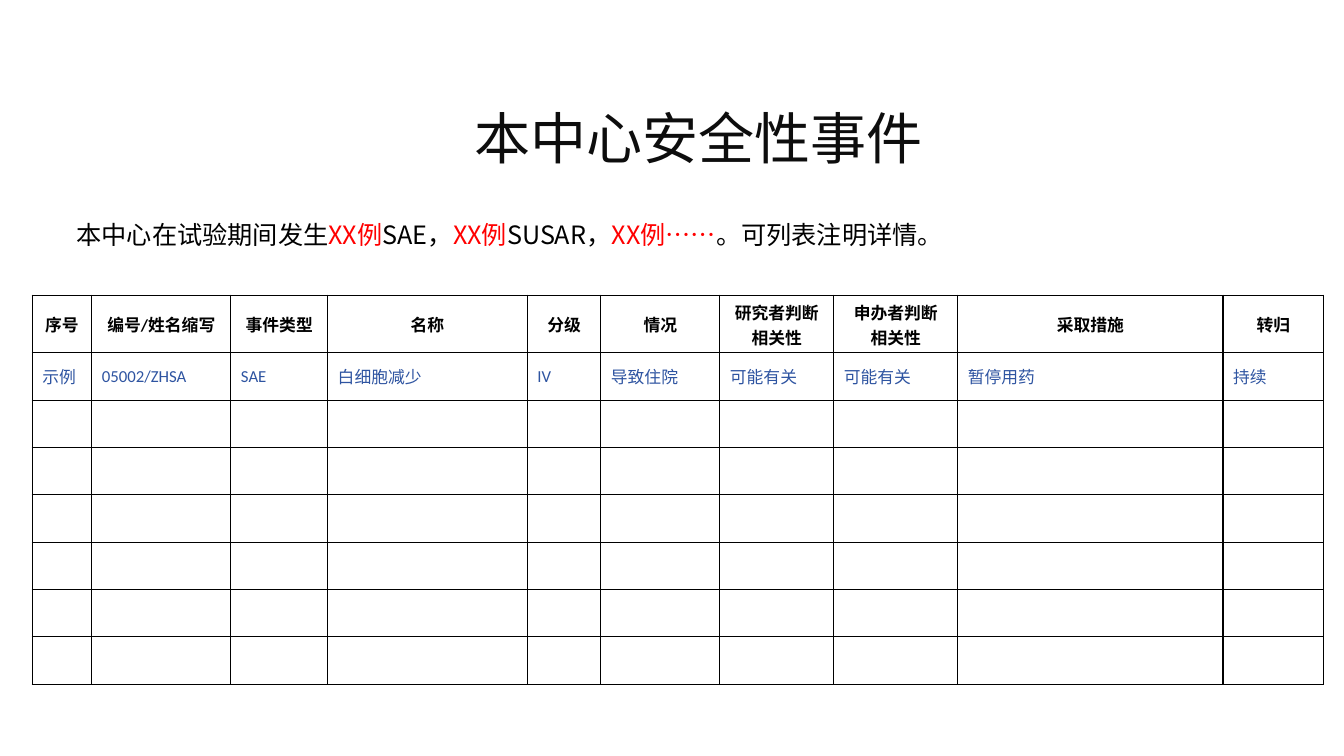
from pptx import Presentation
from pptx.dml.color import RGBColor
from pptx.enum.text import MSO_ANCHOR as ANCHOR, PP_ALIGN as ALIGN
from pptx.oxml.ns import qn
from pptx.util import Inches, Pt
from lxml.etree import SubElement

CJK = "Noto Sans CJK SC"
BLACK, RED, BLUE = "000000", "FF0000", "2E54A1"
TITLE = "本中心安全性事件"
SUMMARY = [
    ("本中心在试验期间发生", BLACK),
    ("XX例", RED),
    ("SAE，", BLACK),
    ("XX例", RED),
    ("SUSAR，", BLACK),
    ("XX例……", RED),
    ("。可列表注明详情。", BLACK),
]
COLUMNS = [
    ("序号", "示例", 0.59),
    ("编号/姓名缩写", "05002/ZHSA", 1.38),
    ("事件类型", "SAE", 0.96),
    ("名称", "白细胞减少", 1.98),
    ("分级", "IV", 0.73),
    ("情况", "导致住院", 1.18),
    ("研究者判断\n相关性", "可能有关", 1.13),
    ("申办者判断\n相关性", "可能有关", 1.23),
    ("采取措施", "暂停用药", 2.63),
    ("转归", "持续", 1),
]
EMPTY_ROWS = 6
HEADER_H, ROW_H = 0.57, 0.47


def rgb(color):
    return RGBColor.from_string(color)


def add_run(p, text, size, color, font=CJK, bold=False):
    r = p.add_run()
    r.text = text
    r.font.size = Pt(size)
    r.font.bold = bold
    r.font.name = font
    r.font.color.rgb = rgb(color)
    SubElement(r.font._element, qn("a:ea"), typeface=CJK)


def add_text(s, box, runs, size, spacing=1, wrap=True):
    tf = s.shapes.add_textbox(*map(Inches, box)).text_frame
    tf.word_wrap = wrap
    p = tf.paragraphs[0]
    p.line_spacing = spacing
    for text, color in runs:
        add_run(p, text, size, color)


def style_cell(cell):
    tcPr = cell._tc.get_or_add_tcPr()
    for side in ("lnL", "lnR", "lnT", "lnB"):
        ln = SubElement(tcPr, qn(f"a:{side}"), w=str(Pt(1)))
        fill = SubElement(ln, qn("a:solidFill"))
        SubElement(fill, qn("a:srgbClr"), val=BLACK)
    cell.fill.background()
    cell.vertical_anchor = ANCHOR.MIDDLE


def fill_cell(cell, text, color, bold, align):
    tf = cell.text_frame
    for i, line in enumerate(text.split("\n")):
        p = tf.add_paragraph() if i else tf.paragraphs[0]
        p.alignment = align
        add_run(p, line, 12, color, "Calibri", bold)


def add_events(s):
    heights = [HEADER_H] + [ROW_H] * (1 + EMPTY_ROWS)
    width = sum(w for _, _, w in COLUMNS)
    table = s.shapes.add_table(
        len(heights), len(COLUMNS), Inches(0.32), Inches(2.93),
        Inches(width), Inches(sum(heights))).table
    table.first_row = table.horz_banding = False
    for row, height in zip(table.rows, heights):
        row.height = Inches(height)
    for cell in table.iter_cells():
        style_cell(cell)
    for i, (header, example, w) in enumerate(COLUMNS):
        table.columns[i].width = Inches(w)
        fill_cell(table.cell(0, i), header, BLACK, True, ALIGN.CENTER)
        fill_cell(table.cell(1, i), example, BLUE, False, ALIGN.LEFT)


def main():
    prs = Presentation()
    prs.slide_width, prs.slide_height = Inches(13.33), Inches(7.5)
    s = prs.slides.add_slide(prs.slide_layouts[6])
    add_text(s, (4.61, 0.98, 7.76, 0.77), [(TITLE, "0D0D0D")], 40)
    add_text(s, (0.66, 1.83, 11.4, 0.82), SUMMARY, 18, spacing=2.0)
    add_events(s)
    prs.save("out.pptx")


if __name__ == "__main__":
    main()
